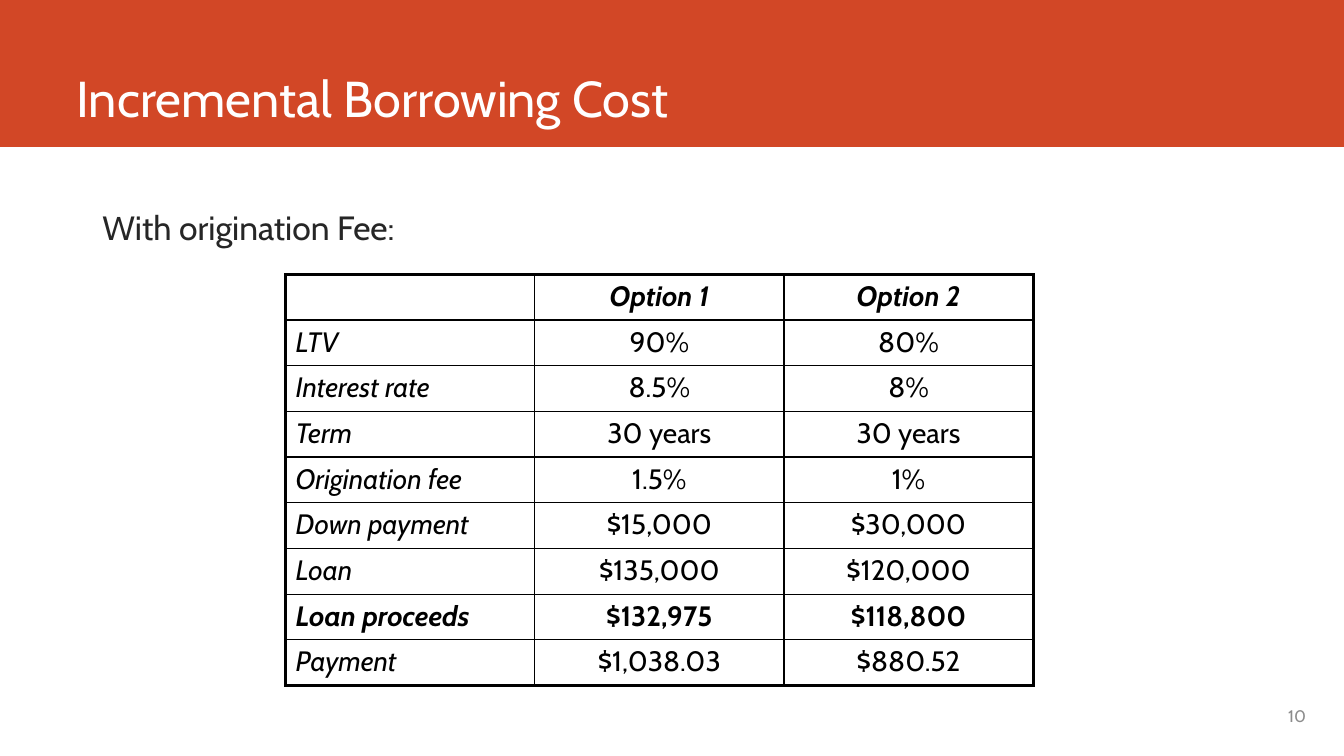
import pptx
import pptx.dml.color
import pptx.enum.shapes
import pptx.enum.text
import pptx.oxml.ns
import pptx.util
from lxml import etree

Pt = pptx.util.Pt
PP_ALIGN = pptx.enum.text.PP_ALIGN
ANCHOR = pptx.enum.text.MSO_ANCHOR
FONT = "Cabin"
COLORS = {
    "band": "D24726",
    "title": "FFFFFF",
    "body": "262626",
    "number": "8C8C8C",
    "table": "000000",
}
LOAN_TERMS = [
    ("", "Option 1", "Option 2"),
    ("LTV", "90%", "80%"),
    ("Interest rate", "8.5%", "8%"),
    ("Term", "30 years", "30 years"),
    ("Origination fee", "1.5%", "1%"),
    ("Down payment", "$15,000", "$30,000"),
    ("Loan", "$135,000", "$120,000"),
    ("Loan proceeds", "$132,975", "$118,800"),
    ("Payment", "$1,038.03", "$880.52"),
]
BOLD_LABELS = ("", "Loan proceeds")
COLUMN_WIDTH, ROW_HEIGHT = 178, 32.65
OUTER_LINE, INNER_LINE = 2.25, 1


def rgb(name):
    return pptx.dml.color.RGBColor.from_string(COLORS[name])


def place(shape, left, top, width, height):
    shape.left, shape.top = Pt(left), Pt(top)
    shape.width, shape.height = Pt(width), Pt(height)


def write(frame, text, size, color, align=PP_ALIGN.LEFT, bold=False, italic=False):
    """Set the only paragraph of a text frame and return it."""
    frame.text = text
    paragraph = frame.paragraphs[0]
    paragraph.alignment = align
    font = paragraph.font
    font.name, font.size = FONT, Pt(size)
    font.bold, font.italic = bold, italic
    font.color.rgb = rgb(color)
    return paragraph


def add_band(slide):
    """Draw the coloured header band behind the title."""
    band = slide.shapes.add_shape(
        pptx.enum.shapes.MSO_SHAPE.RECTANGLE, 0, 0, Pt(960), Pt(105))
    band.shadow.inherit = False
    band.fill.solid()
    band.fill.fore_color.rgb = rgb("band")
    band.line.fill.background()
    slide.shapes.title.element.addprevious(band.element)


def fill_title(slide):
    title = slide.shapes.title
    place(title, 47.5, 0, 847, 95)
    title.text_frame.vertical_anchor = ANCHOR.BOTTOM
    write(title.text_frame, "Incremental Borrowing Cost", 36, "title")


def fill_body(slide):
    body = slide.placeholders[1]
    place(body, 66, 144, 828, 347)
    intro = write(body.text_frame, "With origination Fee:", 24, "body")
    intro.space_before = intro.space_after = Pt(6)
    properties = intro.font._element.getparent()
    properties.set("marL", "0")
    properties.set("indent", "0")
    bullet = etree.Element(pptx.oxml.ns.qn("a:buNone"))
    properties.find(pptx.oxml.ns.qn("a:defRPr")).addprevious(bullet)


def add_slide_number(slide):
    box = slide.shapes.add_textbox(Pt(682), Pt(497), Pt(258), Pt(29))
    box.text_frame.word_wrap = True
    box.text_frame.vertical_anchor = ANCHOR.MIDDLE
    write(box.text_frame, "10", 12, "number", PP_ALIGN.RIGHT)


def set_borders(cell, widths):
    """Line the cell's sides; widths are in the order left, right, top, bottom."""
    properties = cell._tc.get_or_add_tcPr()
    for side, width in zip("LRTB", widths):
        line = etree.SubElement(
            properties, pptx.oxml.ns.qn(f"a:ln{side}"), w=str(int(Pt(width))))
        fill = etree.SubElement(line, pptx.oxml.ns.qn("a:solidFill"))
        etree.SubElement(fill, pptx.oxml.ns.qn("a:srgbClr"), val=COLORS["table"])


def add_loan_table(slide):
    row_count, column_count = len(LOAN_TERMS), len(LOAN_TERMS[0])
    table = slide.shapes.add_table(
        row_count, column_count, Pt(204), Pt(196),
        Pt(COLUMN_WIDTH * column_count), Pt(ROW_HEIGHT * row_count)).table
    table.first_row = table.horz_banding = False
    for column in table.columns:
        column.width = Pt(COLUMN_WIDTH)
    for r, terms in enumerate(LOAN_TERMS):
        table.rows[r].height = Pt(ROW_HEIGHT)
        for c, text in enumerate(terms):
            cell = table.cell(r, c)
            on_edge = (c == 0, c == column_count - 1, r == 0, r == row_count - 1)
            set_borders(cell, [OUTER_LINE if edge else INNER_LINE for edge in on_edge])
            cell.fill.background()
            write(cell.text_frame, text, 20, "table",
                  PP_ALIGN.CENTER if c else PP_ALIGN.LEFT,
                  bold=terms[0] in BOLD_LABELS, italic=r == 0 or c == 0)


def main():
    presentation = pptx.Presentation()
    presentation.slide_width, presentation.slide_height = Pt(960), Pt(540)
    slide = presentation.slides.add_slide(presentation.slide_layouts[1])
    add_band(slide)
    fill_title(slide)
    fill_body(slide)
    add_slide_number(slide)
    add_loan_table(slide)
    presentation.save("out.pptx")


if __name__ == "__main__":
    main()
